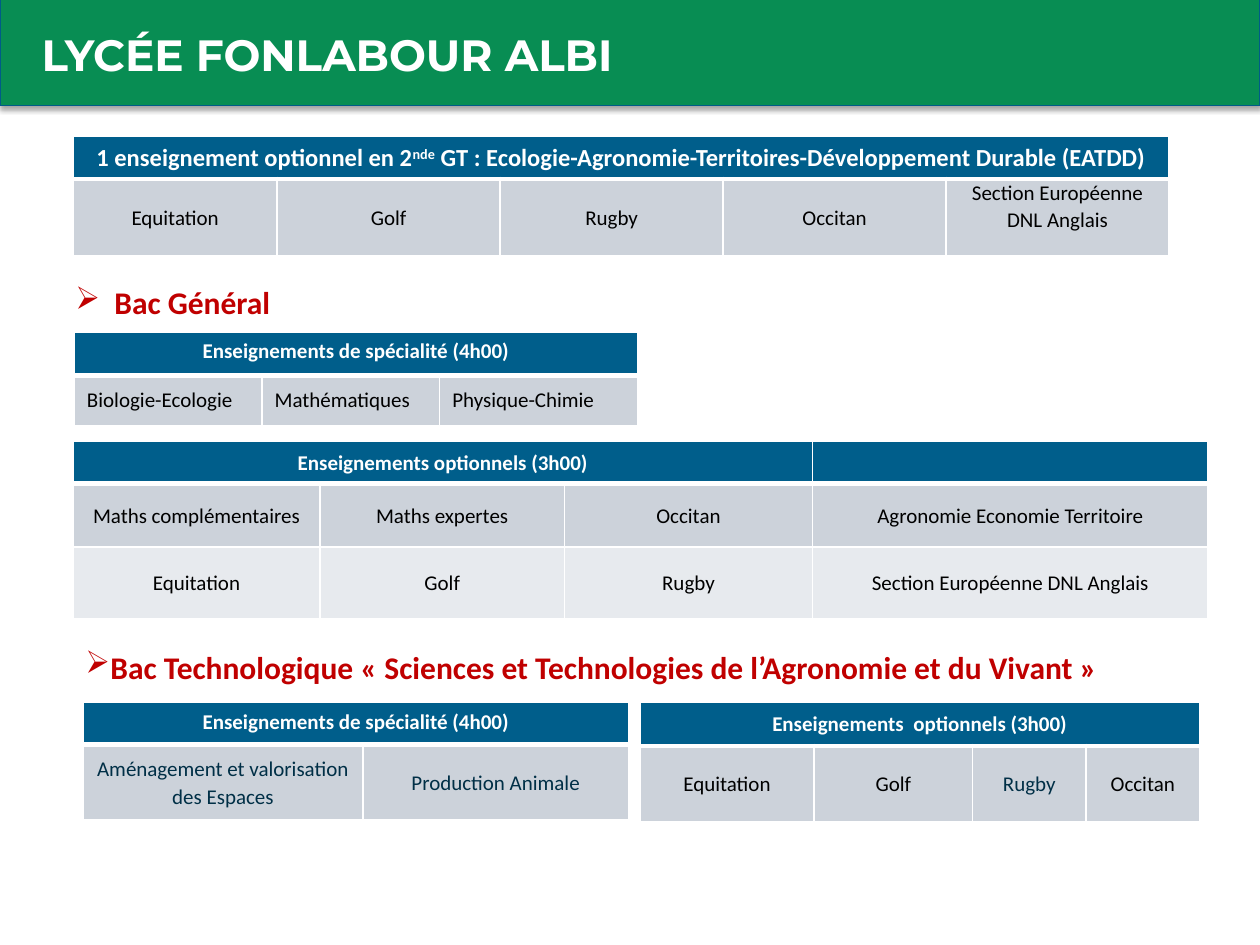
from lxml.etree import SubElement
from pptx import Presentation
from pptx.dml.color import RGBColor
from pptx.enum.shapes import MSO_SHAPE
from pptx.enum.text import MSO_ANCHOR, MSO_AUTO_SIZE, PP_ALIGN
from pptx.oxml import parse_xml
from pptx.oxml.ns import nsdecls, qn
from pptx.util import Inches, Pt

GREEN = RGBColor(0x08, 0x8D, 0x53)
BLUE = RGBColor(0x00, 0x5E, 0x8B)
EDGE = RGBColor(0x00, 0x5C, 0x88)
NAVY = RGBColor(0x00, 0x2F, 0x46)
RED = RGBColor(0xC0, 0x00, 0x00)
GREY = RGBColor(0xCC, 0xD2, 0xDA)
PALE = RGBColor(0xE7, 0xEA, 0xEE)
WHITE = RGBColor(0xFF, 0xFF, 0xFF)
BLACK = RGBColor(0x00, 0x00, 0x00)


class Page:
    """Slide builder on a grid of 100 columns by 75 rows."""

    def __init__(self):
        self.deck = Presentation()
        self.deck.slide_width, self.deck.slide_height = Inches(10), Inches(7.5)
        self.slide = self.deck.slides.add_slide(self.deck.slide_layouts[5])
        self.shapes = self.slide.shapes
        self.face = "Calibri"

    def unit(self, *spans):
        return [round(self.deck.slide_width * span / 100) for span in spans]

    def style(self, para, size, ink, bold=False, face=None):
        for run in para.runs:
            font = run.font
            font.name, font.size, font.bold = face or self.face, Pt(size), bold
            font.color.rgb = ink

    def title(self, text):
        band = self.shapes.add_shape(MSO_SHAPE.RECTANGLE, *self.unit(0, -0.3, 100, 8.7))
        band.fill.solid()
        band.fill.fore_color.rgb = GREEN
        band.line.color.rgb, band.line.width = EDGE, Pt(0.75)
        band.element.spPr.append(parse_xml(
            f'<a:effectLst {nsdecls("a")}><a:outerShdw blurRad="{Pt(3.1)}" '
            f'dist="{Pt(1.8)}" dir="5400000" algn="t" rotWithShape="0">'
            '<a:srgbClr val="000000"><a:alpha val="35000"/></a:srgbClr>'
            '</a:outerShdw></a:effectLst>'))
        head = self.shapes.title
        head.element.addprevious(band.element)
        head.left, head.top, head.width, head.height = self.unit(2.3, 0, 85.9, 8.6)
        frame = head.text_frame
        frame.text, frame.vertical_anchor = text, MSO_ANCHOR.MIDDLE
        frame.paragraphs[0].alignment = PP_ALIGN.LEFT
        self.style(frame.paragraphs[0], 25, WHITE, True, "Montserrat")

    def heading(self, x, y, width, text, hang=0):
        box = self.shapes.add_textbox(*self.unit(x, y, width, 4))
        frame = box.text_frame
        frame.word_wrap, frame.auto_size = True, MSO_AUTO_SIZE.SHAPE_TO_FIT_TEXT
        frame.text = text
        para = frame.paragraphs[0]
        props = para._p.get_or_add_pPr()
        gap = self.unit(hang)[0]
        props.set("marL", str(gap))
        props.set("indent", str(-gap))
        SubElement(props, qn("a:buChar"), char="➢")
        self.style(para, 18, RED, True)

    def border(self, cell, top, low):
        props = cell._tc.get_or_add_tcPr()
        for rank, (side, width) in enumerate(zip("LRTB", (1, 1, top, low))):
            props.insert(rank, parse_xml(
                f'<a:ln{side} {nsdecls("a")} w="{Pt(width)}"><a:solidFill>'
                f'<a:srgbClr val="{WHITE}"/></a:solidFill></a:ln{side}>'))

    def paint(self, cell, text, fill, size, ink, bold, lead, align, inset):
        cell.fill.solid()
        cell.fill.fore_color.rgb = fill
        cell.vertical_anchor = MSO_ANCHOR.MIDDLE
        cell.margin_left = cell.margin_right = Inches(inset[0])
        cell.margin_top = cell.margin_bottom = Inches(inset[1])
        para = cell.text_frame.paragraphs[0]
        para.alignment, para.line_spacing = align, lead
        for part in text if isinstance(text, list) else [text]:
            if part:
                para.add_run().text = part
        self.style(para, size, ink, bold)
        if not text:
            SubElement(para._p, qn("a:endParaRPr"), sz=str(size * 100))

    def table(self, x, y, cols, highs, head, rows, span=None, size=12, ink=BLACK,
              lead=1.07, align=PP_ALIGN.CENTER, inset=(0.1, 0.05)):
        count = len(cols)
        frame = self.shapes.add_table(len(highs), count,
                                      *self.unit(x, y, sum(cols), sum(highs)))
        table = frame.table
        for col, width in zip(table.columns, self.unit(*cols)):
            col.width = width
        for row, high in zip(table.rows, self.unit(*highs)):
            row.height = high
        table.cell(0, 0).merge(table.cell(0, (span or count) - 1))
        lines = [[head] + [""] * (count - 1)] + rows
        for r, line in enumerate(lines):
            fill = (BLUE, GREY, PALE)[r]
            look = (size, WHITE, True) if r == 0 else (12, ink, False)
            side = PP_ALIGN.CENTER if r == 0 else align
            for c, text in enumerate(line):
                cell = table.cell(r, c)
                self.paint(cell, text, fill, *look, lead, side, inset)
                self.border(cell, 3 if r == 1 else 1, 3 if r == 0 else 1)
        return table


def main():
    page = Page()
    page.title("LYCÉE FONLABOUR ALBI")
    major = "Enseignements de spécialité (4h00)"

    page.heading(5, 22, 90, "Bac Général", 3.1)
    page.table(5.8, 35, [19.6, 19.4, 19.7, 31.4], [3.4, 5, 5.7],
               "Enseignements optionnels (3h00)",
               [["Maths complémentaires", "Maths expertes", "Occitan",
                 "Agronomie Economie Territoire"],
                ["Equitation", "Golf", "Rugby", "Section Européenne DNL Anglais"]],
               span=3)
    core = page.table(5.9, 26.4, [14.9, 14.1, 15.7], [3.4, 4], major,
                      [["Biologie-Ecologie", "Mathématiques", "Physique-Chimie"]],
                      lead=1.0, align=PP_ALIGN.LEFT)

    page.heading(5.8, 50.9, 92.1, "Bac Technologique « Sciences et Technologies "
                 "de l’Agronomie et du Vivant »")
    extra = page.table(50.8, 55.7, [13.8, 12.6, 9, 9], [3.5, 6],
                       "Enseignements  optionnels (3h00)",
                       [["Equitation", "Golf", "Rugby", "Occitan"]])
    page.style(extra.cell(1, 2).text_frame.paragraphs[0], 12, NAVY)
    tech = page.table(6.6, 55.7, [22.2, 21.1], [3.4, 6], major,
                      [["Aménagement et valorisation des Espaces",
                        "Production Animale"]], ink=NAVY)
    for table in (core, tech):
        table.cell(0, 0).vertical_anchor = MSO_ANCHOR.TOP

    first = page.table(5.8, 10.8, [16.2] + [17.7] * 4, [3.4, 6.1],
                       ["1 enseignement optionnel en 2", "nde",
                        " GT : Ecologie-Agronomie-Territoires-"
                        "Développement Durable (EATDD)"],
                       [["Equitation", "Golf", "Rugby", "Occitan",
                         "Section Européenne DNL Anglais"]],
                       size=14, inset=(0.08, 0))
    power = first.cell(0, 0).text_frame.paragraphs[0].runs[1]
    power._r.get_or_add_rPr().set("baseline", "30000")
    first.cell(1, 4).vertical_anchor = MSO_ANCHOR.TOP

    page.deck.save("out.pptx")


if __name__ == "__main__":
    main()
